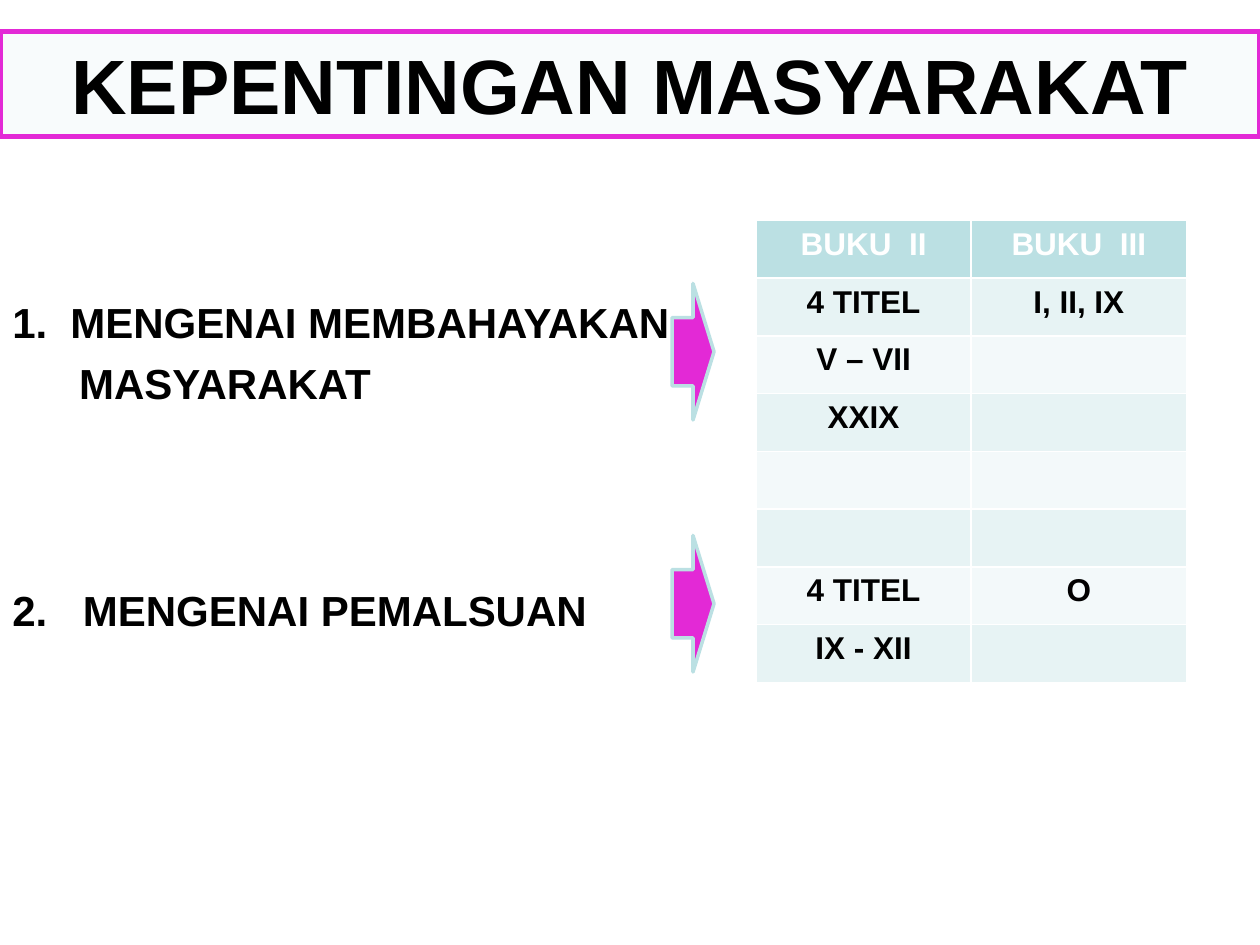
from dataclasses import dataclass

from lxml.etree import SubElement
from pptx import Presentation
from pptx.dml.color import RGBColor
from pptx.enum.shapes import MSO_SHAPE as Preset
from pptx.enum.text import MSO_ANCHOR as Anchor, MSO_AUTO_SIZE as AutoSize, PP_ALIGN as Align
from pptx.oxml.ns import qn
from pptx.util import Inches, Pt


@dataclass(frozen=True)
class Theme:
    font: str = "Arial"
    ink: str = "000000"
    white: str = "FFFFFF"
    magenta: str = "E329D6"
    aqua: str = "BBE0E3"
    title_fill: str = "F8FBFC"
    bands: tuple = ("E7F3F4", "F3F9FA")
    title_size: int = 44
    item_size: int = 24
    table_size: int = 18


theme = Theme()


def style_text(paragraph, size, color, align):
    paragraph.alignment = align
    font = paragraph.font
    font.name, font.size, font.bold = theme.font, Pt(size), True
    font.color.rgb = RGBColor.from_string(color)


def paint(shape, fill, line, width):
    shape.fill.solid()
    shape.fill.fore_color.rgb = RGBColor.from_string(fill)
    shape.line.color.rgb = RGBColor.from_string(line)
    shape.line.width = Pt(width)
    shape.shadow.inherit = False


presentation = Presentation()
presentation.slide_width, presentation.slide_height = Inches(10), Inches(7.5)
column = presentation.slide_width // 120
row = presentation.slide_height // 90
slide = presentation.slides.add_slide(presentation.slide_layouts[5])

title = slide.shapes.title
title.left, title.top, title.width, title.height = 0, 3 * row, 120 * column, 10 * row
paint(title, theme.title_fill, theme.magenta, 3)
title.text_frame.text = "KEPENTINGAN MASYARAKAT"
title.text_frame.auto_size = AutoSize.NONE
title.text_frame.vertical_anchor = Anchor.MIDDLE
style_text(title.text_frame.paragraphs[0], theme.title_size, theme.ink, Align.CENTER)

items = [
    ("MENGENAI MEMBAHAYAKAN", 1, 0.46, 0),
    ("MASYARAKAT", None, 0.53, 6),
    ("MENGENAI PEMALSUAN", 2, 0.56, 101),
]
item_box = slide.shapes.add_textbox(0, 16 * row, 120 * column, 71 * row)
item_frame = item_box.text_frame
item_frame.word_wrap = True
item_frame.margin_top = Inches(1.02)
for index, (text, number, indent, space) in enumerate(items):
    paragraph = item_frame.add_paragraph() if index else item_frame.paragraphs[0]
    paragraph.text = text
    paragraph.space_before = Pt(space)
    style_text(paragraph, theme.item_size, theme.ink, Align.LEFT)
    properties = paragraph.runs[0].font
    properties.size, properties.bold = Pt(theme.item_size), True
    paragraph_properties = paragraph._p.get_or_add_pPr()
    paragraph_properties.set("marL", str(Inches(indent)))
    paragraph_properties.set("indent", str(-Inches(indent) if number else 0))
    if number:
        bullet = paragraph_properties.makeelement(
            qn("a:buAutoNum"), {"type": "arabicPeriod", "startAt": str(number)}
        )
        paragraph_properties.find(qn("a:defRPr")).addprevious(bullet)

table_rows = [
    ("BUKU  II", "BUKU  III"),
    ("4 TITEL", "I, II, IX"),
    ("V – VII", ""),
    ("XXIX", ""),
    ("", ""),
    ("", ""),
    ("4 TITEL", "O"),
    ("IX - XII", ""),
]
table = slide.shapes.add_table(
    len(table_rows), 2, 72 * column, 21 * row, 41 * column, 44 * row
).table
for row_index, texts in enumerate(table_rows):
    fill = theme.bands[(row_index - 1) % 2] if row_index else theme.aqua
    color = theme.ink if row_index else theme.white
    for column_index, text in enumerate(texts):
        cell = table.cell(row_index, column_index)
        cell.text = text
        style_text(cell.text_frame.paragraphs[0], theme.table_size, color, Align.CENTER)
        cell_properties = cell._tc.get_or_add_tcPr()
        for side in ("a:lnL", "a:lnR", "a:lnT", "a:lnB"):
            border = SubElement(cell_properties, qn(side), w=str(Pt(1)))
            border_fill = SubElement(border, qn("a:solidFill"))
            SubElement(border_fill, qn("a:srgbClr"), val=theme.white)
        cell.fill.solid()
        cell.fill.fore_color.rgb = RGBColor.from_string(fill)

for arrow_row in (27, 51):
    arrow = slide.shapes.add_shape(
        Preset.RIGHT_ARROW, 64 * column, arrow_row * row, 4 * column, 13 * row
    )
    paint(arrow, theme.magenta, theme.aqua, 2)

presentation.save("out.pptx")
